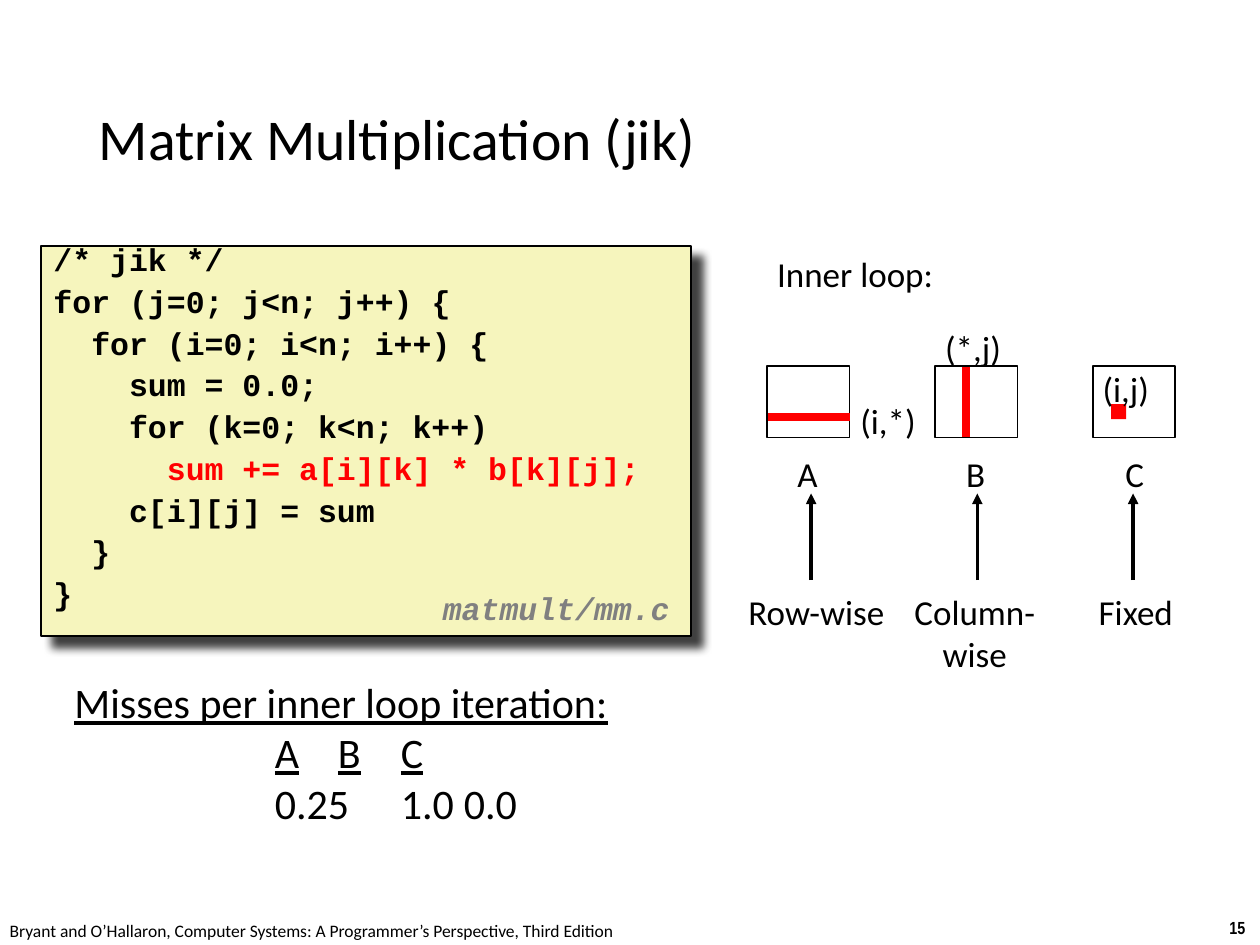
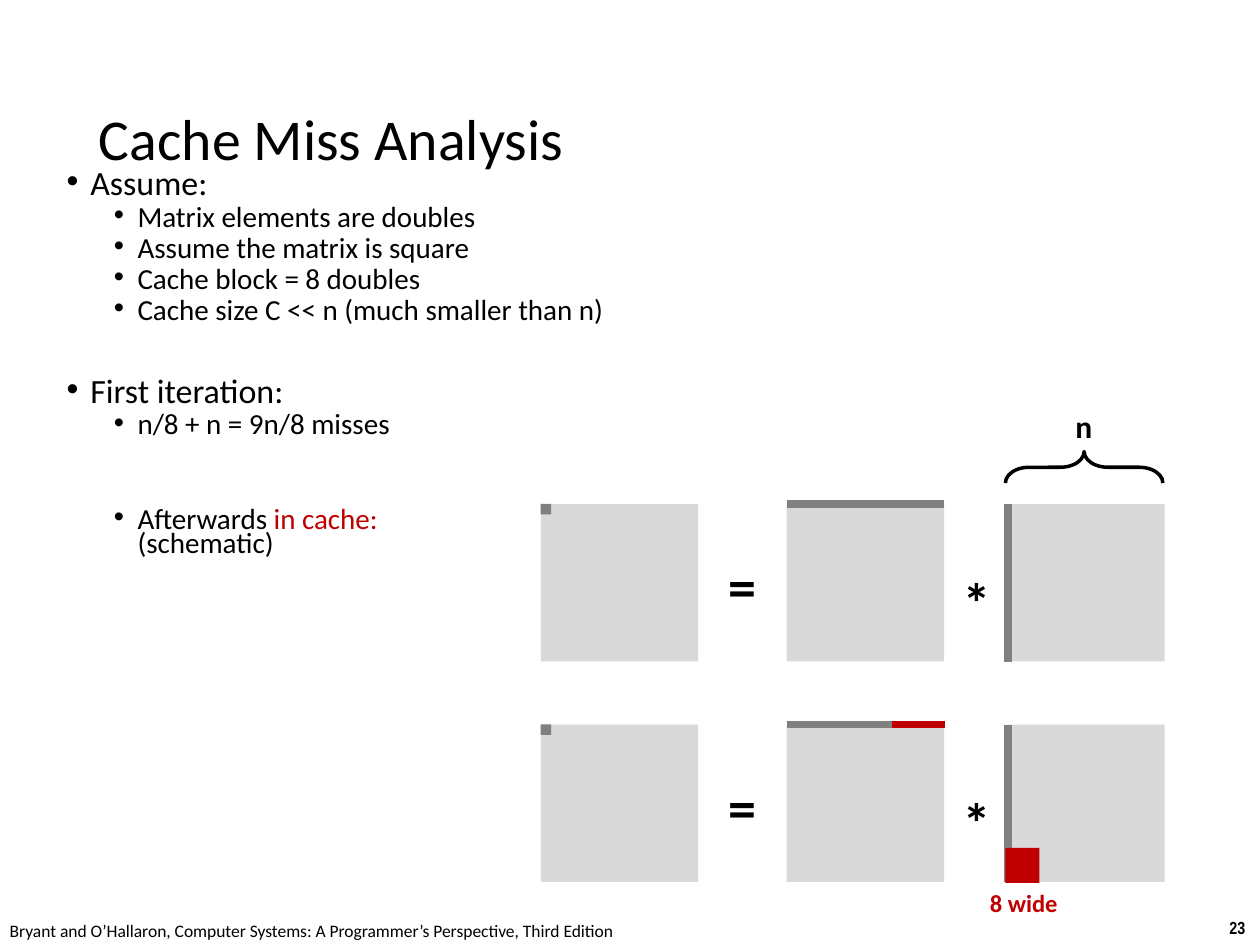
from lxml import etree
from pptx import Presentation
from pptx.dml.color import RGBColor
from pptx.enum.shapes import MSO_CONNECTOR, MSO_SHAPE
from pptx.enum.text import MSO_ANCHOR, PP_ALIGN
from pptx.oxml.ns import qn
from pptx.util import Pt

RECT, BRACE = MSO_SHAPE.RECTANGLE, MSO_SHAPE.LEFT_BRACE
STRAIGHT = MSO_CONNECTOR.STRAIGHT
TOP, MIDDLE = MSO_ANCHOR.TOP, MSO_ANCHOR.MIDDLE
LEFT, CENTER = PP_ALIGN.LEFT, PP_ALIGN.CENTER
BLACK, WHITE, RED = "000000", "FFFFFF", "FF0000"
DARK_RED, GRAY, LIGHT_GRAY, CREAM = "C00000", "808080", "D9D9D9", "F6F5BD"
rgb = RGBColor.from_string
FOOTER = ("Bryant and O’Hallaron, Computer Systems: "
          "A Programmer’s Perspective, Third Edition")


def add_box(s, x, y, w, h, text="", fill=None, line=None, color=BLACK,
            wrap=False, anchor=TOP, align=LEFT, **font):
    """Add a rectangle if a fill is given, else a text box; one paragraph per line of text."""
    place = Pt(x), Pt(y), Pt(w), Pt(h)
    if fill:
        sp = s.shapes.add_shape(RECT, *place)
        sp.shadow.inherit = False
        sp.fill.solid()
        sp.fill.fore_color.rgb = rgb(fill)
        if line:
            sp.line.color.rgb = rgb(line)
            sp.line.width = Pt(1)
        else:
            sp.line.fill.background()
    else:
        sp = s.shapes.add_textbox(*place)
    tf = sp.text_frame
    tf.word_wrap, tf.vertical_anchor = wrap, anchor
    if text:
        tf.text = text
    for p in tf.paragraphs:
        p.alignment = align
        for key, value in ({"name": "Calibri"} | font).items():
            setattr(p.font, key, value)
        p.font.color.rgb = rgb(color)
        for r in p.runs:
            for key, value in ({"name": "Calibri"} | font).items():
                setattr(r.font, key, value)
            r.font.color.rgb = rgb(color)
    return sp


def add_line(s, x1, y1, x2, y2, color, width, arrow=False):
    c = s.shapes.add_connector(STRAIGHT, Pt(x1), Pt(y1), Pt(x2), Pt(y2))
    c.line.color.rgb = rgb(color)
    c.line.width = Pt(width)
    if arrow:
        etree.SubElement(c.line._get_or_add_ln(), qn("a:tailEnd"), type="triangle")
    etree.SubElement(c._element.spPr, qn("a:effectLst"))


prs = Presentation()
prs.slide_width, prs.slide_height = Pt(720), Pt(540)
slides = []
for title, number in (("Matrix Multiplication (jik)", "15"),
                      ("Cache Miss Analysis", "23")):
    s = prs.slides.add_slide(prs.slide_layouts[6])
    add_box(s, 695.5, 520.5, 24.5, 19.5, number, name="Arial Narrow", size=Pt(10), bold=True)
    add_box(s, -1.5, 522, 366, 19.5, FOOTER, size=Pt(10))
    sp = add_box(s, 49.5, 29, 620.5, 104.5, title, wrap=True, anchor=MIDDLE, size=Pt(33))
    sp.text_frame.paragraphs[0].line_spacing = 0.9
    slides.append(s)

# Slide 1: code with its access pattern
s = slides[0]
code = [
    (0, "/* jik */"),
    (0, "for (j=0; j<n; j++) {"),
    (1, "for (i=0; i<n; i++) {"),
    (2, "sum = 0.0;"),
    (2, "for (k=0; k<n; k++)"),
    (3, "sum += a[i][k] * b[k][j];"),
    (2, "c[i][j] = sum"),
    (1, "}"),
    (0, "}"),
]
sp = add_box(s, 23.5, 140.5, 371.5, 223, "\n".join(text for _, text in code),
             fill=CREAM, line=BLACK, wrap=True, name="Courier New", size=Pt(18), bold=True)
for p, (depth, text) in zip(sp.text_frame.paragraphs, code):
    p.line_spacing, p.space_before = 0.65, Pt(9.8)
    p._p.get_or_add_pPr().set("marL", str(Pt(21.6 * depth)))
    if text.startswith("sum +="):
        p.runs[0].font.color.rgb = rgb(RED)
shadow = etree.SubElement(sp._element.spPr.find(qn("a:effectLst")), qn("a:outerShdw"),
                          blurRad=str(Pt(5)), dist=str(Pt(8.5)), dir="2700000",
                          algn="tl", rotWithShape="0")
shadow_color = etree.SubElement(shadow, qn("a:srgbClr"), val=BLACK)
etree.SubElement(shadow_color, qn("a:alpha"), val="75000")
sp = add_box(s, 246, 335, 150, 28, "matmult/mm.c", color=GRAY,
             name="Courier New", size=Pt(18), bold=True, italic=True)
sp.text_frame.paragraphs[0].line_spacing = 0.94

add_box(s, 437, 140.5, 104.5, 31, "Inner loop:", wrap=True, size=Pt(20))
matrices = [  # name, left, name left, arrow x, access, access left, access width
    ("A", 438.5, 448.5, 463.5, "Row-wise", 420, 93),
    ("B", 534.5, 545, 558.5, "Column-\nwise", 515, 84),
    ("C", 624.5, 636, 647.5, "Fixed", 620.5, 57),
]
for name, x, name_x, arrow_x, access, access_x, access_w in matrices:
    add_box(s, x, 209, 47, 41, fill=WHITE, line=BLACK)
    add_box(s, name_x, 255, 26, 31, name, size=Pt(20))
    add_box(s, access_x, 334, access_w, 31, access, align=CENTER, size=Pt(20))
    add_line(s, arrow_x, 331.5, arrow_x, 282, BLACK, 2, arrow=True)
add_line(s, 552, 209.5, 552, 250, RED, 4.5)
add_line(s, 439, 238.5, 485.5, 238.5, RED, 4.5)
add_box(s, 635, 231, 8.5, 8.5, fill=RED)
for index, x, y, w in (("(i,*)", 484.5, 224.5, 46),
                       ("(*,j)", 533, 183, 47),
                       ("(i,j)", 623, 206.5, 41)):
    add_box(s, x, y, w, 31, index, size=Pt(20))

misses = "Misses per inner loop iteration:\nA\tB\tC\n0.25\t1.0\t0.0"
sp = add_box(s, 35.5, 383, 429, 96.5, misses, wrap=True, size=Pt(24))
heading, names, values = sp.text_frame.paragraphs
heading.runs[0].font.underline = True
for p in (names, values):
    p._p.get_or_add_pPr().set("marL", str(Pt(114.5)))
names.clear()
for text in ("A", "\t", "B", "\t", "C"):
    r = names.add_run()
    r.text = text
    r.font.name, r.font.size = "Calibri", Pt(24)
    r.font.underline = text != "\t"

# Slide 2: assumptions, then the first iteration
s = slides[1]
bullets = [  # level, extra space before, text
    (0, 0, "Assume:"),
    (1, 0, "Matrix elements are doubles"),
    (1, 0, "Assume the matrix is square"),
    (1, 0, "Cache block = 8 doubles"),
    (1, 0, "Cache size C << n (much smaller than n)"),
    (0, 24, "First iteration:"),
    (1, 0, "n/8 + n = 9n/8 misses"),
    (1, 36, "Afterwards "),
]
sp = add_box(s, 31, 95, 622, 240.5, "\n".join(text for *_, text in bullets), wrap=True)
for p, (level, gap, _) in zip(sp.text_frame.paragraphs, bullets):
    size, before, margin = ((19.4, 7.5, 13.5), (16.6, 3.8, 40.5))[level]
    p.line_spacing, p.space_before = 0.7, Pt(before + gap)
    p.font.size = p.runs[0].font.size = Pt(size)
    pPr = p._p.get_or_add_pPr()
    pPr.set("marL", str(Pt(margin)))
    pPr.set("indent", str(Pt(-13.5)))
    bullet_font = etree.Element(qn("a:buFont"), typeface="Arial")
    bullet = etree.Element(qn("a:buChar"), char="•")
    pPr.find(qn("a:spcBef")).addnext(bullet_font)
    bullet_font.addnext(bullet)
for text, color in (("in cache:", DARK_RED), ("(schematic)", BLACK)):
    if color == BLACK:
        p.add_line_break()
    r = p.add_run()
    r.text = text
    r.font.name, r.font.size = "Calibri", Pt(16.6)
    r.font.color.rgb = rgb(color)

SIDE = 90
result_x, left_x, right_x = 309, 449.5, 575.5
for y in (288, 414):
    for x in (result_x, left_x, right_x):
        add_box(s, x, y, SIDE, SIDE, fill=LIGHT_GRAY)
    add_box(s, result_x, y, 6, 6, fill=GRAY)
    add_line(s, left_x, y, left_x + SIDE, y, GRAY, 4.5)
    add_line(s, right_x + 0.5, y, right_x + 0.5, y + SIDE, GRAY, 4.5)
    add_box(s, 409, y + 23.75, 31, 46, "=", size=Pt(32), bold=True)
    add_box(s, 543, y + 32.5, 31, 46, "*", size=Pt(32), bold=True)

sp = s.shapes.add_shape(BRACE, Pt(610.5), Pt(222), Pt(18), Pt(SIDE))
sp.rotation = 90
sp.adjustments[0] = 0.75
sp.shadow.inherit = False
sp.fill.background()
sp.line.color.rgb = rgb(BLACK)
sp.line.width = Pt(2)
add_box(s, 607.5, 229, 24.5, 29, "n", size=Pt(18), bold=True)

add_line(s, 510, 414, 540, 414, DARK_RED, 4.5)
add_box(s, 574.5, 484.5, 19.5, 20, fill=DARK_RED)
add_box(s, 558.5, 504, 53.5, 24.5, "8 wide", color=DARK_RED, size=Pt(14), bold=True)

prs.save("out.pptx")
